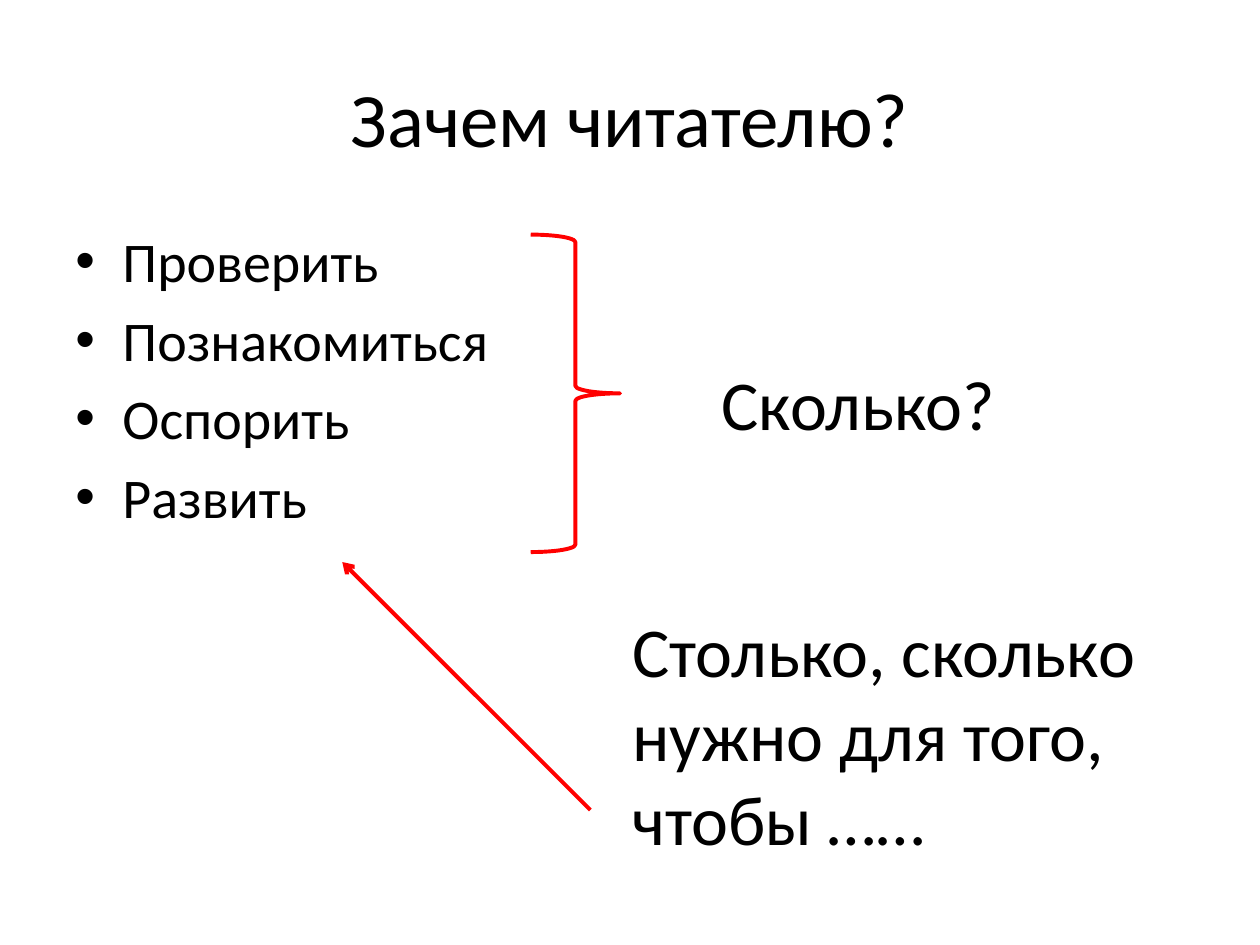
from lxml import etree
from pptx import Presentation
from pptx.dml.color import RGBColor
from pptx.enum.shapes import MSO_CONNECTOR, MSO_SHAPE
from pptx.enum.text import MSO_ANCHOR, PP_ALIGN
from pptx.oxml.ns import qn
from pptx.util import Cm, Pt

STRAIGHT = MSO_CONNECTOR.STRAIGHT
RIGHT_BRACE = MSO_SHAPE.RIGHT_BRACE
TOP, MIDDLE = MSO_ANCHOR.TOP, MSO_ANCHOR.MIDDLE
LEFT, CENTER = PP_ALIGN.LEFT, PP_ALIGN.CENTER

FONT = "Calibri"
COLORS = {"text": "000000", "accent": "FF0000", "background": "FFFFFF"}
REASONS = ["Проверить", "Познакомиться", "Оспорить", "Развить"]


def color(name):
    return RGBColor.from_string(COLORS[name])


def add_bullet(p):
    pPr = p._p.get_or_add_pPr()
    pPr.set("marL", str(Cm(0.95)))
    pPr.set("indent", str(-Cm(0.95)))
    etree.SubElement(pPr, qn("a:buFont"), typeface="Arial")
    etree.SubElement(pPr, qn("a:buChar"), char="•")


def add_text(s, box, lines, size, align=LEFT, anchor=TOP, bullets=False):
    tf = s.shapes.add_textbox(*map(Cm, box)).text_frame
    tf.word_wrap = True
    tf.vertical_anchor = anchor
    for i, line in enumerate(lines):
        p = tf.add_paragraph() if i else tf.paragraphs[0]
        p.alignment = align
        if bullets:
            p.space_before = Pt(6.4 if i else 0)
            add_bullet(p)
        r = p.add_run()
        r.text = line
        r.font.name = FONT
        r.font.size = Pt(size)
        r.font.color.rgb = color("text")


def style_line(line):
    line.color.rgb = color("accent")
    line.width = Pt(2.25)


def add_brace(s, box):
    sp = s.shapes.add_shape(RIGHT_BRACE, *map(Cm, box))
    sp.shadow.inherit = False
    sp.fill.background()
    style_line(sp.line)


def add_arrow(s, start, end):
    cxn = s.shapes.add_connector(STRAIGHT, *map(Cm, start + end))
    style_line(cxn.line)
    etree.SubElement(cxn.line._get_or_add_ln(), qn("a:tailEnd"), type="arrow")
    etree.SubElement(cxn._element.spPr, qn("a:effectLst"))


def main():
    prs = Presentation()
    prs.slide_width, prs.slide_height = Cm(25.4), Cm(19.05)
    s = prs.slides.add_slide(prs.slide_layouts[6])
    s.background.fill.solid()
    s.background.fill.fore_color.rgb = color("background")

    add_text(s, (1.27, 0.76, 22.86, 3.18), ["Зачем читателю?"], 44, CENTER, MIDDLE)
    add_text(s, (1.27, 4.45, 22.86, 12.57), REASONS, 32, bullets=True)
    add_brace(s, (10.7, 4.73, 1.8, 6.4))
    add_text(s, (14.3, 7.14, 7.2, 1.96), ["Сколько?"], 40)
    add_text(s, (12.5, 12.12, 11.6, 5.38),
             ["Столько, сколько нужно для того, чтобы ……"], 40)
    add_arrow(s, (11.9, 16.33), (6.9, 11.33))

    prs.save("out.pptx")


if __name__ == "__main__":
    main()
